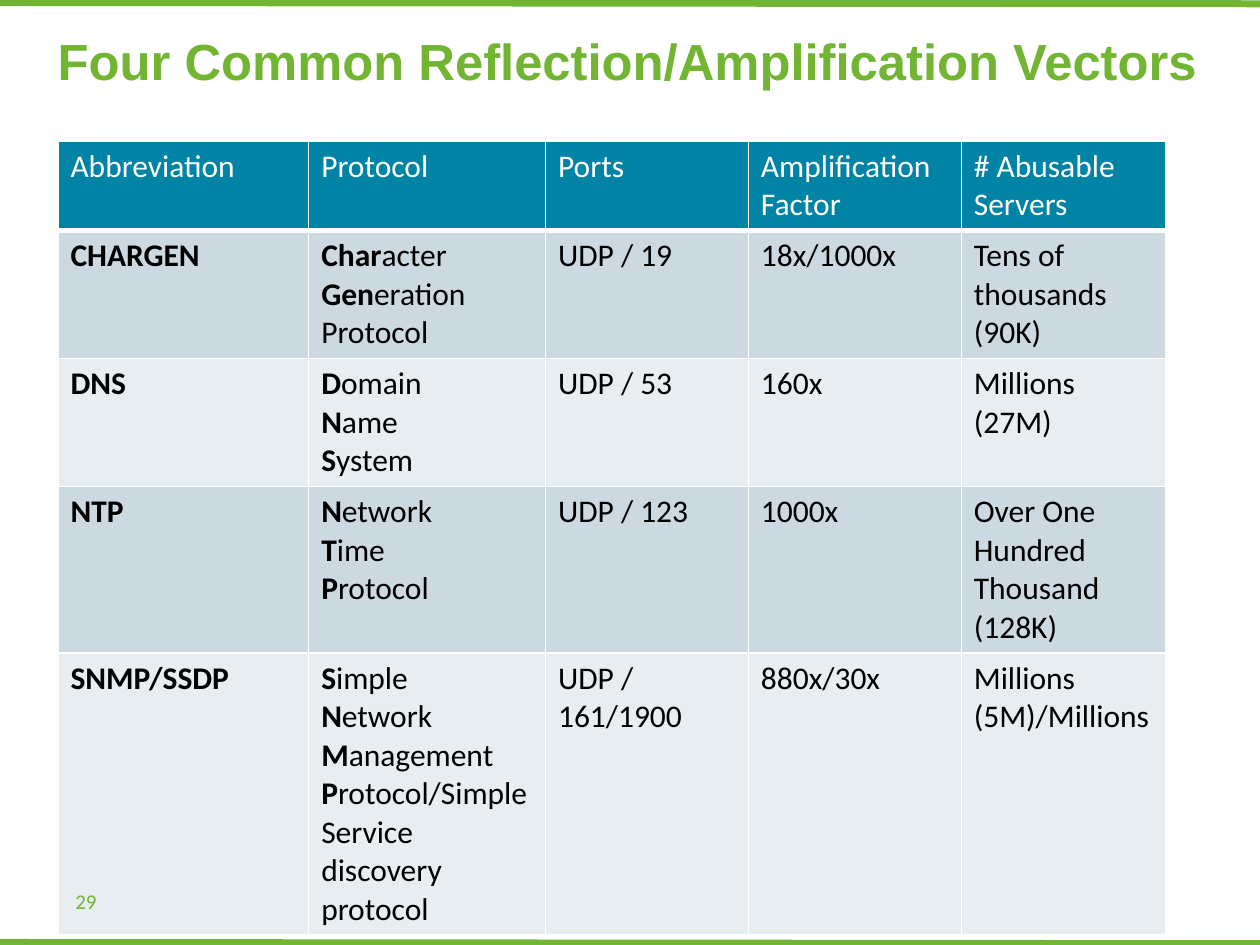
"""Build the slide on four common reflection/amplification vectors."""
from lxml.etree import SubElement
from pptx import Presentation
from pptx.dml.color import RGBColor
from pptx.enum.shapes import MSO_CONNECTOR as Connector
from pptx.enum.text import MSO_ANCHOR as Anchor
from pptx.oxml.ns import qn
from pptx.util import Inches, Pt

GREEN = RGBColor(0x71, 0xB5, 0x32)
TEAL = RGBColor(0x00, 0x83, 0xA5)
BLUE_GREY = RGBColor(0xCC, 0xD9, 0xE1)
PALE_GREY = RGBColor(0xE7, 0xED, 0xF0)
WHITE = RGBColor(0xFF, 0xFF, 0xFF)
BLACK = RGBColor(0x00, 0x00, 0x00)

COLUMN_WIDTHS = [1.99, 1.88, 1.61, 1.69, 1.62]
ROW_HEIGHT = 0.41
VECTORS = [
    ["Abbreviation", "Protocol", "Ports", "Amplification\nFactor", "# Abusable\nServers"],
    ["*CHARGEN*", "*Char*acter\n*Gen*eration\nProtocol", "UDP / 19", "18x/1000x",
     "Tens of thousands\n(90K)"],
    ["*DNS*", "*D*omain\n*N*ame\n*S*ystem", "UDP / 53", "160x", "Millions (27M)"],
    ["*NTP*", "*N*etwork\n*T*ime\n*P*rotocol", "UDP / 123", "1000x",
     "Over One Hundred Thousand\n(128K)"],
    ["*SNMP/SSDP*",
     "*S*imple\n*N*etwork\n*M*anagement\n*P*rotocol/Simple Service discovery protocol",
     "UDP / 161/1900", "880x/30x", "Millions\n(5M)/Millions"],
]


def write(frame, marked_text, color, **font_format):
    """Write one paragraph per line, with the parts between asterisks in bold."""
    for index, line in enumerate(marked_text.split("\n")):
        paragraph = frame.add_paragraph() if index else frame.paragraphs[0]
        for position, part in enumerate(line.split("*")):
            if part:
                run = paragraph.add_run()
                run.text = part
                run.font.bold = position % 2 == 1
                run.font.color.rgb = color
                for attribute, value in font_format.items():
                    setattr(run.font, attribute, value)


def add_border(cell, side, points):
    """Give one side of a cell a white border."""
    border = SubElement(cell._tc.get_or_add_tcPr(), qn(f"a:{side}"), w=str(Pt(points)))
    fill = SubElement(border, qn("a:solidFill"))
    SubElement(fill, qn("a:srgbClr"), val=str(WHITE))


deck = Presentation()
deck.slide_width, deck.slide_height = Inches(10), Inches(7.5)
slide = deck.slides.add_slide(deck.slide_layouts[6])

for y in (7.48, 0.02):
    rule = slide.shapes.add_connector(
        Connector.STRAIGHT, Inches(0), Inches(y), Inches(10.02), Inches(y + 0.01))
    rule.line.color.rgb = GREEN
    rule.line.width = Pt(4)
    SubElement(rule._element.spPr, qn("a:effectLst"))

vectors = slide.shapes.add_table(
    len(VECTORS), len(COLUMN_WIDTHS), Inches(0.46), Inches(1.12),
    Inches(sum(COLUMN_WIDTHS)), Inches(ROW_HEIGHT * len(VECTORS))).table
for column, width in zip(vectors.columns, COLUMN_WIDTHS):
    column.width = Inches(width)

for row, entries in enumerate(VECTORS):
    vectors.rows[row].height = Inches(ROW_HEIGHT)
    background = TEAL if row == 0 else BLUE_GREY if row % 2 else PALE_GREY
    borders = {"lnL": 1, "lnR": 1, "lnT": 3 if row == 1 else 1, "lnB": 1 if row else 3}
    for column, entry in enumerate(entries):
        cell = vectors.cell(row, column)
        for side, points in borders.items():
            add_border(cell, side, points)
        cell.fill.solid()
        cell.fill.fore_color.rgb = background
        write(cell.text_frame, entry, BLACK if row else WHITE, name="Calibri", size=Pt(18))

CAPTIONS = [
    ("*Four Common Reflection/Amplification Vectors*", (0.36, 0.18, 9.28, 0.59),
     {"name": "Arial", "size": Pt(29)}),
    ("29", (0.5, 6.95, 2.33, 0.4), {"name": "Calibri", "size": Pt(12)}),
]
for caption, place, font_format in CAPTIONS:
    frame = slide.shapes.add_textbox(*map(Inches, place)).text_frame
    frame.word_wrap = True
    frame.vertical_anchor = Anchor.MIDDLE
    write(frame, caption, GREEN, **font_format)

deck.save("out.pptx")
